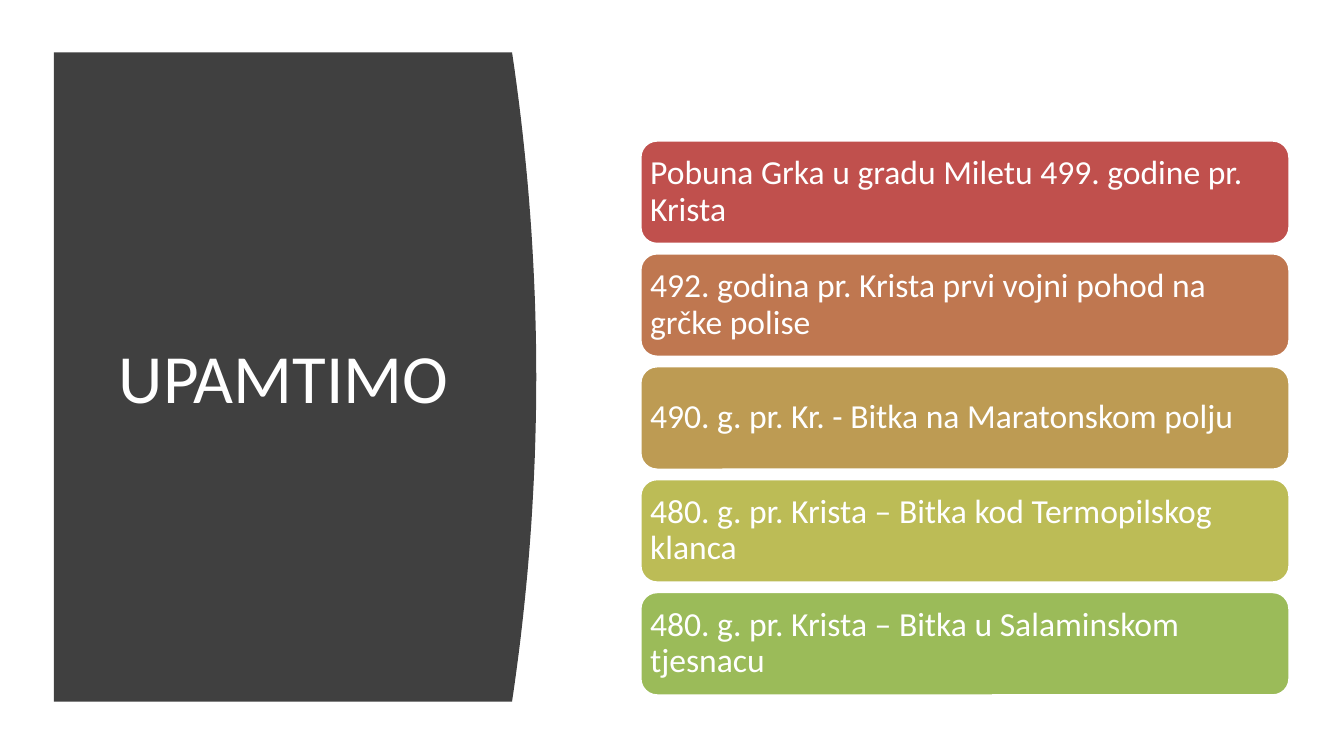
from dataclasses import dataclass

from pptx import Presentation
from pptx.dml.color import RGBColor
from pptx.enum.shapes import MSO_SHAPE
from pptx.enum.text import MSO_ANCHOR as Anchor, MSO_AUTO_SIZE as AutoSize, PP_ALIGN as Align
from pptx.util import Inches, Pt

WHITE = RGBColor(0xFF, 0xFF, 0xFF)
CHARCOAL = RGBColor(0x40, 0x40, 0x40)
RED = RGBColor(0xC0, 0x50, 0x4D)
COPPER = RGBColor(0xBF, 0x77, 0x50)
OCHRE = RGBColor(0xBD, 0x9B, 0x53)
OLIVE = RGBColor(0xBC, 0xBC, 0x56)
GREEN = RGBColor(0x9B, 0xBB, 0x59)

FONT = "Calibri"

# Curved panel
PANEL_LEFT, PANEL_TOP, PANEL_BOTTOM = 0.4, 0.39, 5.22
PANEL_RIGHT, PANEL_BULGE, CURVE_STEPS = 3.81, 0.18, 40

# Column of event bars
BAR_LEFT, BAR_TOP, BAR_WIDTH, BAR_HEIGHT = 4.76, 1.04, 4.84, 0.78
BAR_PITCH = 0.84


@dataclass
class Event:
    text: str
    color: RGBColor


EVENTS = [
    Event("Pobuna Grka u gradu Miletu 499. godine pr. Krista", RED),
    Event("492. godina pr. Krista prvi vojni pohod na grčke polise", COPPER),
    Event("490. g. pr. Kr. - Bitka na Maratonskom polju", OCHRE),
    Event("480. g. pr. Krista – Bitka kod Termopilskog klanca", OLIVE),
    Event("480. g. pr. Krista – Bitka u Salaminskom tjesnacu", GREEN),
]


def write_text(shape, text: str, size: float, align: Align, inset: float,
               spacing: float) -> None:
    """Put one white, vertically centred paragraph in a shape."""
    frame = shape.text_frame
    settings = {"word_wrap": True, "auto_size": AutoSize.NONE,
                "vertical_anchor": Anchor.MIDDLE}
    for side in ("left", "top", "right", "bottom"):
        settings[f"margin_{side}"] = Inches(inset)
    for name, value in settings.items():
        setattr(frame, name, value)
    para = frame.paragraphs[0]
    para.alignment = align
    para.line_spacing = spacing
    span = para.add_run()
    span.text = text
    for name, value in {"name": FONT, "size": Pt(size), "bold": False}.items():
        setattr(span.font, name, value)
    span.font.color.rgb = WHITE


def draw_panel(page) -> None:
    """Draw the dark panel whose right side bulges as a parabola."""
    height = PANEL_BOTTOM - PANEL_TOP
    edge = []
    for step in range(CURVE_STEPS + 1):
        part = step / CURVE_STEPS
        bulge = PANEL_BULGE * (1 - (2 * part - 1) ** 2)
        edge.append((Inches(PANEL_RIGHT + bulge), Inches(PANEL_TOP + part * height)))
    builder = page.shapes.build_freeform(Inches(PANEL_LEFT), Inches(PANEL_TOP))
    builder.add_line_segments(edge + [(Inches(PANEL_LEFT), Inches(PANEL_BOTTOM))], close=True)
    panel = builder.convert_to_shape()
    panel.shadow.inherit = False
    panel.fill.solid()
    panel.fill.fore_color.rgb = CHARCOAL
    panel.line.fill.background()


def draw_event(page, event: Event, top: float) -> None:
    bar = page.shapes.add_shape(MSO_SHAPE.ROUNDED_RECTANGLE, Inches(BAR_LEFT), Inches(top),
                                Inches(BAR_WIDTH), Inches(BAR_HEIGHT))
    bar.shadow.inherit = False
    bar.fill.solid()
    bar.fill.fore_color.rgb = event.color
    bar.line.color.rgb = WHITE
    bar.line.width = Pt(2)
    write_text(bar, event.text, 18, Align.LEFT, 0.04, 0.9)


def main() -> None:
    deck = Presentation()
    deck.slide_width = Inches(10)
    deck.slide_height = deck.slide_width * 9 // 16
    page = deck.slides.add_slide(deck.slide_layouts[5])

    draw_panel(page)

    # Title, raised above the panel
    title = page.shapes.title
    place = {"left": 0.71, "top": 0.83, "width": 2.8, "height": 3.93}
    for name, value in place.items():
        setattr(title, name, Inches(value))
    write_text(title, "UPAMTIMO", 37, Align.CENTER, 0.05, 1.0)
    page.shapes._spTree.append(title._element)

    # Events in order
    for row, event in enumerate(EVENTS):
        draw_event(page, event, BAR_TOP + row * BAR_PITCH)

    deck.save("out.pptx")


if __name__ == "__main__":
    main()
